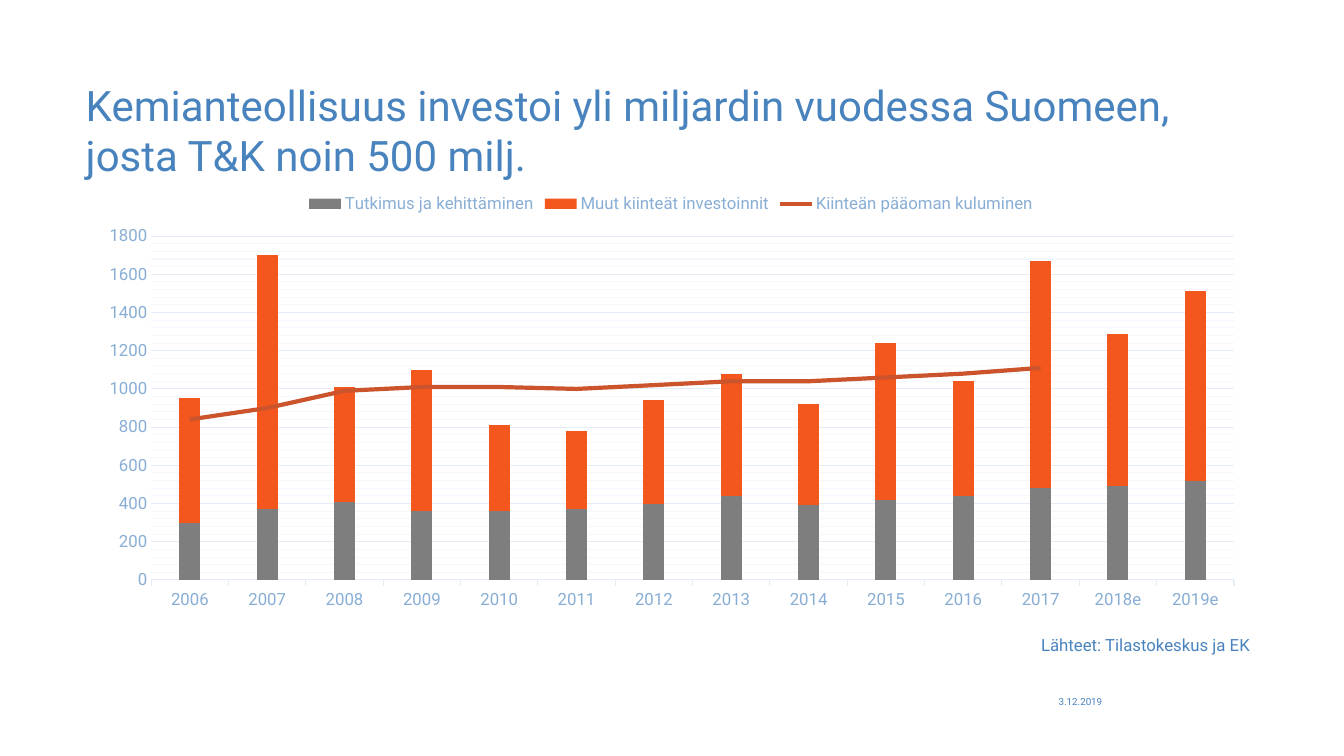
from dataclasses import dataclass

from lxml import etree
from pptx import Presentation
from pptx import util as u
from pptx.chart.data import CategoryChartData
from pptx.dml.color import RGBColor
from pptx.enum import chart as ch
from pptx.enum import text
from pptx.oxml import parse_xml
from pptx.oxml.ns import nsdecls, qn

FONT = "Roboto"
BLUE, PALE_BLUE, GRID, MINOR_GRID = "4883BE", "88AED5", "E4ECF5", "F4F7FB"
WIDTH, HEIGHT = u.Inches(13.33), u.Inches(7.5)
YEARS = [str(year) for year in range(2006, 2018)] + ["2018e", "2019e"]


@dataclass
class Box:
    left: float
    top: float
    width: float
    height: float

    def emu(self) -> tuple[int, int, int, int]:
        return (int(self.left * WIDTH), int(self.top * HEIGHT),
                int(self.width * WIDTH), int(self.height * HEIGHT))


@dataclass
class Label:
    words: str
    box: Box
    size: int
    align: text.PP_ALIGN
    anchor: text.MSO_ANCHOR
    right_inset: float = 0


@dataclass
class Series:
    name: str
    color: str
    values: list


TITLE = Label("Kemianteollisuus investoi yli miljardin vuodessa Suomeen, josta T&K noin 500 milj.",
              Box(0.0638, 0.1053, 0.8702, 0.1307), 30,
              text.PP_ALIGN.LEFT, text.MSO_ANCHOR.TOP, 0.04)
LABELS = [
    Label("Lähteet: Tilastokeskus ja EK", Box(0.5236, 0.828, 0.4096, 0.0493), 12,
          text.PP_ALIGN.RIGHT, text.MSO_ANCHOR.MIDDLE, 0.04),
    Label("3.12.2019", Box(0.772, 0.92, 0.0638, 0.0267), 7,
          text.PP_ALIGN.CENTER, text.MSO_ANCHOR.TOP),
]
CHART_BOX = Box(0.0638, 0.2413, 0.871, 0.5773)
PLOT_BOX = Box(0.056, 0.123, 0.925, 0.788)
SERIES = [
    Series("Tutkimus ja kehittäminen", "7E7E7E",
           [300, 370, 410, 360, 360, 370, 400, 440, 390, 420, 440, 480, 490, 520]),
    Series("Muut kiinteät investoinnit", "F3571E",
           [650, 1330, 600, 740, 450, 410, 540, 640, 530, 820, 600, 1190, 800, 990]),
    Series("Kiinteän pääoman kuluminen", "CC542C",
           [840, 900, 990, 1010, 1010, 1000, 1020, 1040, 1040, 1060, 1080, 1110, None, None]),
]


def rgb(value: str) -> RGBColor:
    return RGBColor.from_string(value)


def style_font(font, size: int, color: str) -> None:
    font.name, font.size, font.bold = FONT, u.Pt(size), False
    font.color.rgb = rgb(color)


def style_line(line, color: str, width: float) -> None:
    line.color.rgb = rgb(color)
    line.width = u.Pt(width)


def write_label(sp, label: Label) -> None:
    sp.left, sp.top, sp.width, sp.height = label.box.emu()
    tf = sp.text_frame
    tf.text = label.words
    tf.word_wrap = True
    tf.auto_size = text.MSO_AUTO_SIZE.NONE
    tf.vertical_anchor = label.anchor
    tf.margin_left = tf.margin_top = tf.margin_bottom = 0
    tf.margin_right = u.Inches(label.right_inset)
    p = tf.paragraphs[0]
    p.alignment = label.align
    style_font(p.font, label.size, BLUE)


def move_last_series_to_line(chart) -> None:
    bars = chart.plots[0]._element
    ser = bars.findall(qn("c:ser"))[-1]
    for bar_only in ser.findall(qn("c:invertIfNegative")):
        ser.remove(bar_only)
    line_chart = parse_xml(f'<c:lineChart {nsdecls("c")}><c:grouping val="standard"/>'
                           '<c:varyColors val="0"/></c:lineChart>')
    line_chart.append(ser)
    etree.SubElement(line_chart, qn("c:marker")).set("val", "1")
    for axis_id in bars.findall(qn("c:axId")):
        etree.SubElement(line_chart, qn("c:axId")).set("val", axis_id.get("val"))
    bars.addnext(line_chart)


def place_plot(chart, box: Box) -> None:
    area = chart._chartSpace.find(f'{qn("c:chart")}/{qn("c:plotArea")}')
    for old in area.findall(qn("c:layout")):
        area.remove(old)
    sizes = {"x": box.left, "y": box.top, "w": box.width, "h": box.height}
    modes = "".join(f'<c:{key}Mode val="edge"/>' for key in "xy")
    shares = "".join(f'<c:{key} val="{share}"/>' for key, share in sizes.items())
    area.insert(0, parse_xml(
        f'<c:layout {nsdecls("c")}><c:manualLayout><c:layoutTarget val="inner"/>'
        f'{modes}{shares}</c:manualLayout></c:layout>'))


def style_axes(chart) -> None:
    years, values = chart.category_axis, chart.value_axis
    for axis in (years, values):
        style_font(axis.tick_labels.font, 12, PALE_BLUE)
    years.major_tick_mark = ch.XL_TICK_MARK.OUTSIDE
    style_line(years.format.line, GRID, 0.75)
    values.minimum_scale, values.maximum_scale = 0, 1800
    values.major_unit, values.minor_unit = 200, 40
    values.major_tick_mark = ch.XL_TICK_MARK.NONE
    values.format.line.fill.background()
    style_line(values.major_gridlines.format.line, GRID, 0.75)
    values.has_minor_gridlines = True
    values._element.find(qn("c:minorGridlines")).append(parse_xml(
        f'<c:spPr {nsdecls("c", "a")}><a:ln w="{int(u.Pt(0.75))}"><a:solidFill>'
        f'<a:srgbClr val="{MINOR_GRID}"/></a:solidFill></a:ln></c:spPr>'))


def add_investment_chart(slide) -> None:
    data = CategoryChartData()
    data.categories = YEARS
    for series in SERIES:
        data.add_series(series.name, series.values)
    chart = slide.shapes.add_chart(ch.XL_CHART_TYPE.COLUMN_STACKED, *CHART_BOX.emu(), data).chart
    style_font(chart.font, 10, BLUE)
    chart.has_title = False
    chart.has_legend = True
    chart.legend.position = ch.XL_LEGEND_POSITION.TOP
    chart.legend.include_in_layout = False
    style_font(chart.legend.font, 12, PALE_BLUE)
    style_axes(chart)
    move_last_series_to_line(chart)
    place_plot(chart, PLOT_BOX)
    columns, trend = chart.plots
    columns.gap_width, columns.overlap = 269, 100
    columns.vary_by_categories = False
    for bar, series in zip(columns.series, SERIES):
        bar.format.fill.solid()
        bar.format.fill.fore_color.rgb = rgb(series.color)
    wear = trend.series[0]
    style_line(wear.format.line, SERIES[-1].color, 3)
    wear.marker.style = ch.XL_MARKER_STYLE.NONE
    wear.smooth = False


def main() -> None:
    prs = Presentation()
    prs.slide_width, prs.slide_height = WIDTH, HEIGHT
    slide = prs.slides.add_slide(prs.slide_layouts[5])
    write_label(slide.shapes.title, TITLE)
    add_investment_chart(slide)
    for label in LABELS:
        write_label(slide.shapes.add_textbox(*label.box.emu()), label)
    prs.save("out.pptx")


if __name__ == "__main__":
    main()
